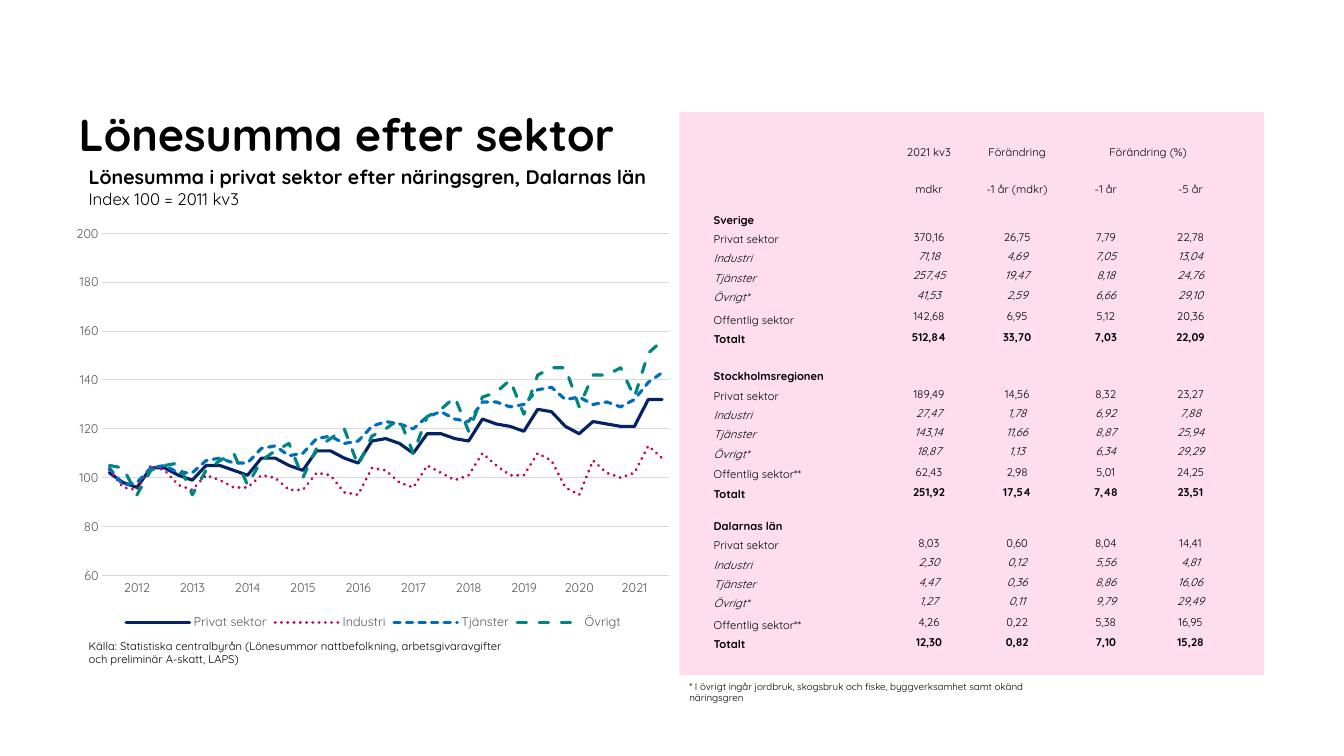
from lxml import etree
from pptx import Presentation
from pptx import util as u
from pptx.chart import data as chart_data
from pptx.dml.color import RGBColor
from pptx.enum import chart as charts, shapes, text
from pptx.oxml import parse_xml
from pptx.oxml.ns import nsdecls, qn

FONT = "Quicksand"
COLORS = {"ink": "000000", "panel": "FEDEED", "axis": "595959", "grid": "D9D9D9",
          "privat": "052364", "industri": "C40064", "tjanster": "006EBF", "ovrigt": "00867F"}
NO_STYLE = "{2D5ABB26-0587-4C30-8999-92F81FD0307C}"

SERIES = [
    ("Privat sektor", "privat", "solid",
     [102, 98, 96, 104, 104, 101, 99, 105, 105, 103, 101, 108, 108, 105, 103, 111, 111, 108, 106, 115, 116,
      114, 110, 118, 118, 116, 115, 124, 122, 121, 119, 128, 127, 121, 118, 123, 122, 121, 121, 132, 132]),
    ("Industri", "industri", "sysDot",
     [103, 96, 95, 105, 103, 97, 95, 101, 99, 96, 96, 101, 100, 95, 95, 102, 101, 94, 93, 104, 103,
      98, 96, 105, 102, 99, 101, 110, 105, 101, 101, 110, 107, 96, 93, 107, 102, 100, 102, 113, 108]),
    ("Tjänster", "tjanster", "sysDash",
     [104, 97, 98, 104, 105, 102, 102, 107, 108, 106, 106, 112, 113, 109, 110, 116, 117, 114, 115, 121, 123,
      122, 120, 125, 127, 124, 123, 131, 131, 129, 130, 136, 137, 132, 133, 130, 131, 129, 132, 139, 143]),
    ("Övrigt", "ovrigt", "dash",
     [105, 104, 93, 103, 105, 106, 93, 103, 107, 110, 97, 107, 111, 114, 100, 112, 116, 120, 105, 117, 120,
      124, 110, 125, 128, 133, 119, 133, 135, 140, 126, 142, 145, 145, 129, 142, 142, 145, 133, 151, 156]),
]

HEADERS = [["", "2021 kv3", "Förändring", "Förändring (%)", ""],
           ["", "mdkr", "-1 år (mdkr)", "-1 år", "-5 år"]]
SECTORS = ["Privat sektor", "Industri", "Tjänster", "Övrigt*", "Offentlig sektor", "Totalt"]
REGIONS = [
    ("Sverige", 22, 16.6, "",
     ["370,16 26,75 7,79 22,78", "71,18 4,69 7,05 13,04", "257,45 19,47 8,18 24,76",
      "41,53 2,59 6,66 29,10", "142,68 6,95 5,12 20,36", "512,84 33,70 7,03 22,09"]),
    ("Stockholmsregionen", 26.5, 15, "**",
     ["189,49 14,56 8,32 23,27", "27,47 1,78 6,92 7,88", "143,14 11,66 8,87 25,94",
      "18,87 1,13 6,34 29,29", "62,43 2,98 5,01 24,25", "251,92 17,54 7,48 23,51"]),
    ("Dalarnas län", 23, 15.5, "**",
     ["8,03 0,60 8,04 14,41", "2,30 0,12 5,56 4,81", "4,47 0,36 8,86 16,06",
      "1,27 0,11 9,79 29,49", "4,26 0,22 5,38 16,95", "12,30 0,82 7,10 15,28"]),
]


def style(font, size, color="ink", bold=False, italic=False):
    """Apply typeface, size, colour and emphasis to a font."""
    font.name, font.size = FONT, u.Pt(size)
    font.bold, font.italic = bold, italic
    font.color.rgb = RGBColor.from_string(COLORS[color])


def add_text(page, box, content, styles, inset=True, anchor=text.MSO_ANCHOR.TOP):
    """Place a text box whose runs take the given (size, bold) styles."""
    frame = page.shapes.add_textbox(*map(u.Pt, box)).text_frame
    frame.word_wrap, frame.vertical_anchor = True, anchor
    if not inset:
        frame.margin_left = frame.margin_top = frame.margin_right = frame.margin_bottom = 0
    para = frame.paragraphs[0]
    para.text = content
    for span, (size, bold) in zip(para.runs, styles):
        style(span.font, size, bold=bold)


def table_rows():
    """Return (height, cell texts, bold, italic) for every table row."""
    rows = [(26.5, cells, False, False) for cells in HEADERS]
    for region, heading_height, public_height, mark, figures in REGIONS:
        rows.append((heading_height, [region, "", "", "", ""], True, False))
        for index, (sector, line) in enumerate(zip(SECTORS, figures)):
            public = index == 4
            rows.append((public_height if public else 13.8,
                         [sector + mark if public else sector, *line.split()],
                         index == 5, index in (1, 2, 3)))
    return rows


def fill_cell(cell, content, first, header, bold, italic):
    """Write and format one table cell."""
    cell.fill.background()
    cell.margin_left = cell.margin_right = cell.margin_top = u.Pt(0.72)
    cell.margin_bottom = 0
    cell.vertical_anchor = text.MSO_ANCHOR.BOTTOM if first or header else text.MSO_ANCHOR.MIDDLE
    para = cell.text_frame.paragraphs[0]
    para.text = content
    para.alignment = text.PP_ALIGN.LEFT if first else text.PP_ALIGN.CENTER
    for span in para.runs:
        style(span.font, 8, bold=bold, italic=italic)
    if not content:
        etree.SubElement(para._p, qn("a:endParaRPr")).set("sz", "800")


def add_figures(page, box):
    """Place the pink panel and the wage table inside it."""
    left, top, _, _ = box
    panel = page.shapes.add_shape(shapes.MSO_SHAPE.RECTANGLE, *map(u.Pt, box))
    panel.shadow.inherit = False
    panel.fill.solid()
    panel.fill.fore_color.rgb = RGBColor.from_string(COLORS["panel"])
    panel.line.fill.background()

    rows, widths = table_rows(), [124.6, 59.8, 66.2, 60.5, 60.5]
    frame = page.shapes.add_table(len(rows), len(widths), u.Pt(left + 23.8), u.Pt(top + 7.2),
                                  u.Pt(sum(widths)), u.Pt(sum(row[0] for row in rows)))
    table = frame.table
    table.first_row = table.horz_banding = False
    table._tbl.tblPr.find(qn("a:tableStyleId")).text = NO_STYLE
    for column, column_width in zip(table.columns, widths):
        column.width = u.Pt(column_width)
    for r, (row_height, cells, bold, italic) in enumerate(rows):
        table.rows[r].height = u.Pt(row_height)
        for c, content in enumerate(cells):
            fill_cell(table.cell(r, c), content, c == 0, r < len(HEADERS), bold, italic)
    table.cell(0, 3).merge(table.cell(0, 4))


def style_axes(chart):
    """Format the year axis and the index axis."""
    years, index = chart.category_axis, chart.value_axis
    grid = RGBColor.from_string(COLORS["grid"])
    for axis in (years, index):
        axis.major_tick_mark = axis.minor_tick_mark = charts.XL_TICK_MARK.NONE
        style(axis.tick_labels.font, 9, "axis")
    index.minimum_scale, index.maximum_scale, index.major_unit = 60, 200, 20
    index.format.line.fill.background()
    for line in (years.format.line, index.major_gridlines.format.line):
        line.color.rgb, line.width = grid, u.Pt(0.75)
    years._element.find(qn("c:txPr")).find(qn("a:bodyPr")).set("rot", "-60000000")
    skip = parse_xml(f'<c:tickLblSkip {nsdecls("c")} val="1"/>')
    years._element.find(qn("c:noMultiLvlLbl")).addprevious(skip)


def add_index_chart(page, box):
    """Place the line chart of the wage index by industry."""
    data = chart_data.CategoryChartData()
    data.categories = [str(2012 + i // 4) if i % 4 == 2 else "" for i in range(41)]
    for name, _, _, values in SERIES:
        data.add_series(name, values)
    chart = page.shapes.add_chart(charts.XL_CHART_TYPE.LINE, *map(u.Pt, box), data).chart
    style(chart.font, 10)
    chart.has_title = False
    chart.has_legend = True
    chart.legend.position = charts.XL_LEGEND_POSITION.BOTTOM
    chart.legend.include_in_layout = False
    style(chart.legend.font, 9, "axis")
    style_axes(chart)
    for series, (_, color, dash, _) in zip(chart.plots[0].series, SERIES):
        series.smooth = False
        series.marker.style = charts.XL_MARKER_STYLE.NONE
        line = series.format.line
        line.color.rgb, line.width = RGBColor.from_string(COLORS[color]), u.Pt(2.25)
        outline = series._element.find(qn("c:spPr")).find(qn("a:ln"))
        outline.set("cap", "rnd")
        etree.SubElement(outline, qn("a:prstDash")).set("val", dash)

    area = chart._chartSpace.chart.plotArea
    for old in area.findall(qn("c:layout")):
        area.remove(old)
    places = {"x": 0.06, "y": 0.04, "w": 0.92, "h": 0.82}
    modes = '<c:layoutTarget val="inner"/><c:xMode val="edge"/><c:yMode val="edge"/>'
    sizes = "".join(f'<c:{key} val="{value}"/>' for key, value in places.items())
    area.insert(0, parse_xml(f'<c:layout {nsdecls("c")}><c:manualLayout>{modes}{sizes}'
                             '</c:manualLayout></c:layout>'))


def main():
    """Build the slide and save the deck."""
    deck = Presentation()
    deck.slide_width, deck.slide_height = u.Pt(960), u.Pt(540)
    page = deck.slides.add_slide(deck.slide_layouts[6])
    add_text(page, (56.2, 26.6, 663.8, 87.8), "Lönesumma efter sektor", [(32, True)],
             inset=False, anchor=text.MSO_ANCHOR.BOTTOM)
    add_text(page, (56.2, 452.9, 317.5, 26.6),
             "Källa: Statistiska centralbyrån (Lönesummor nattbefolkning, arbetsgivaravgifter "
             "och preliminär A-skatt, LAPS)", [(8, False)])
    add_figures(page, (485.3, 80, 417.6, 402.5))
    add_text(page, (56.2, 114.5, 417.6, 38.9),
             "Lönesumma i privat sektor efter näringsgren, Dalarnas län\vIndex 100 = 2011 kv3",
             [(14, True), (12, False)])
    add_text(page, (485.3, 482.4, 280.8, 15.8),
             "* I övrigt ingår jordbruk, skogsbruk och fiske, byggverksamhet samt okänd näringsgren",
             [(7, False)])
    add_index_chart(page, (46.8, 154.8, 439.9, 298.1))
    deck.save("out.pptx")


if __name__ == "__main__":
    main()
